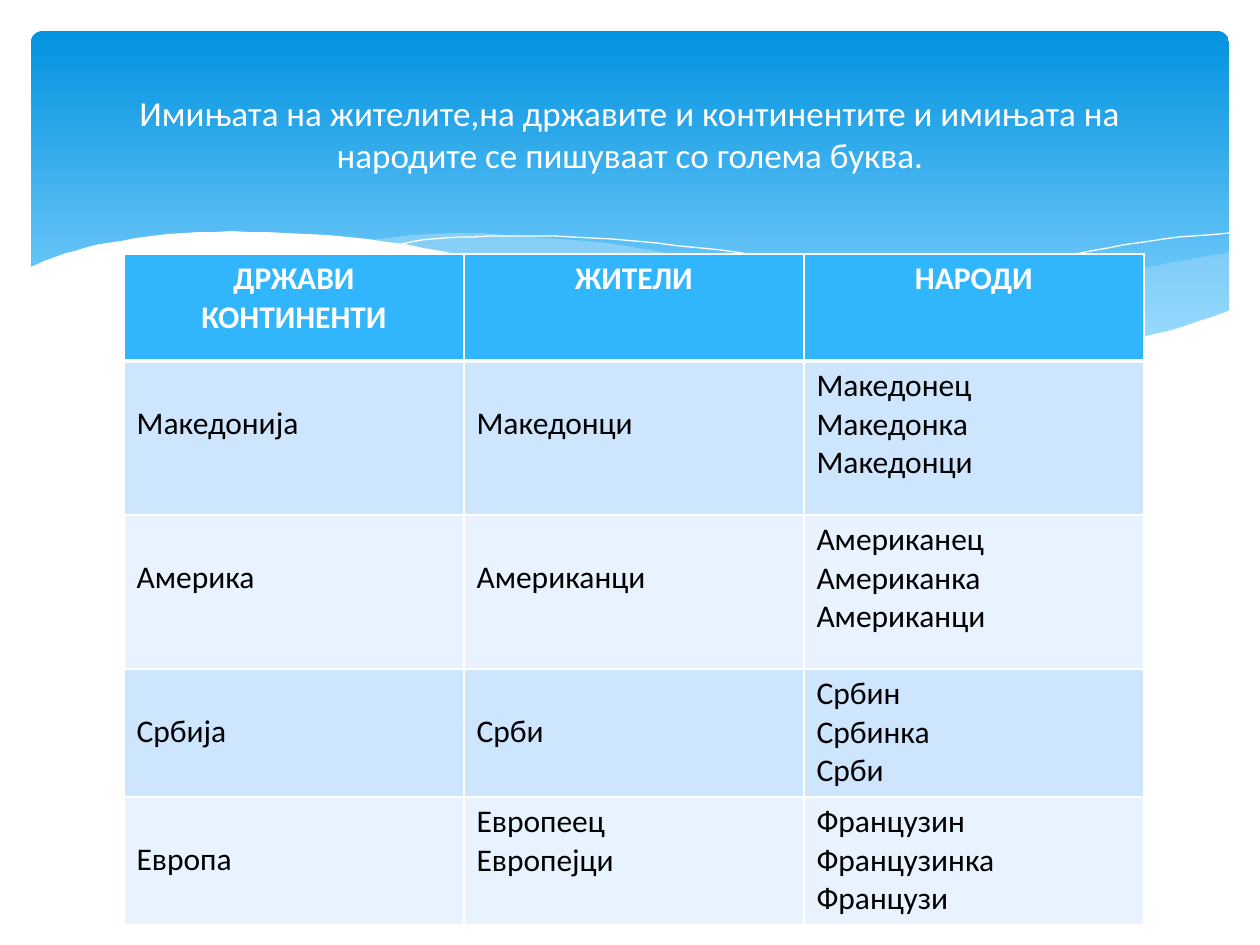
import pptx
import pptx.util
import pptx.dml.color
import pptx.enum.shapes
import pptx.enum.text
import pptx.oxml
import pptx.oxml.ns
from dataclasses import dataclass


@dataclass(frozen=True)
class Theme:
    font: str = "Calibri"
    title_pt: int = 20
    cell_pt: int = 18
    white: str = "FFFFFF"
    black: str = "000000"
    sky_top: str = "0293E0"
    sky_bottom: str = "83D3FE"
    wave: str = "C6E7FC"
    header: str = "31B6FD"
    bands: tuple = ("CEE5FE", "E8F3FF")


T = Theme()
PX = 914400 / 126
WIDTH, HEIGHT = 1260, 945

TITLE = ("Имињата на жителите,на државите и континентите и имињата на "
         "народите се пишуваат со голема буква.")
TITLE_BOX = (63, 47, 1134, 173)
SKY_BOX = (31, 31, 1198, 340)

TABLE = [
    [["ДРЖАВИ", "КОНТИНЕНТИ"], ["ЖИТЕЛИ"], ["НАРОДИ"]],
    [["Македонија"], ["Македонци"], ["Македонец", "Македонка", "Македонци"]],
    [["Америка"], ["Американци"], ["Американец", "Американка", "Американци"]],
    [["Србија"], ["Срби"], ["Србин", "Србинка", "Срби"]],
    [["Европа"], ["Европеец", "Европејци"],
     ["Французин", "Французинка", "Французи"]],
]
TABLE_LEFT, TABLE_TOP, COL_W = 124, 254, 340
ROW_H = [107, 154, 154, 128, 128]
CELL_PAD, LINE_H = 6, 38

WAVES = [
    dict(fill=T.wave, alpha=29, curves=[
        [(1230, 252), (1160, 265), (1085, 281), (949, 312), (833, 334)],
        [(833, 334), (906, 343), (1012, 350), (1110, 344), (1178, 330),
         (1230, 311)]]),
    dict(fill=T.wave, alpha=40, curves=[
        [(1125, 344), (1017, 328), (890, 302), (793, 280), (682, 256),
         (586, 241), (455, 233), (360, 241)],
        [(360, 241), (456, 256), (566, 280), (713, 312), (838, 335),
         (942, 348), (1031, 350), (1125, 344)]]),
    dict(line=T.white, curves=[
        [(389, 246), (433, 239), (505, 236), (591, 238), (701, 248),
         (801, 262), (916, 285), (1047, 316), (1143, 343)]]),
    dict(line=T.white, curves=[
        [(772, 324), (876, 296), (978, 272), (1091, 251), (1164, 239),
         (1229, 233)]]),
    dict(fill=T.white, alpha=100, curves=[
        [(1231, 310), (1172, 330), (1103, 344), (1019, 349), (915, 343),
         (789, 325), (667, 301), (563, 277), (460, 255), (368, 239),
         (266, 232), (184, 233), (107, 243), (58, 256), (29, 268)],
        [(29, 415), (1231, 415)]]),
]


def emu(px):
    return pptx.util.Emu(round(px * PX))


def rgb(value):
    return pptx.dml.color.RGBColor.from_string(value)


def smooth_curve(knots, steps=5):
    padded = [knots[0], *knots, knots[-1]]
    points = [knots[0]]
    for a, b, c, d in zip(padded, padded[1:], padded[2:], padded[3:]):
        for i in range(1, steps + 1):
            t = i / steps
            points.append(tuple(
                (2 * q + (r - p) * t + (2 * p - 5 * q + 4 * r - u) * t ** 2
                 + (3 * q - p - 3 * r + u) * t ** 3) / 2
                for p, q, r, u in zip(a, b, c, d)))
    return points


def add_run(p, text, size, color, bold=False):
    r = p.add_run()
    r.text = text
    r.font.name = T.font
    r.font.size = pptx.util.Pt(size)
    r.font.bold = bold
    r.font.color.rgb = rgb(color)


def add_sky(s):
    sp = s.shapes.add_shape(pptx.enum.shapes.MSO_SHAPE.ROUNDED_RECTANGLE,
                            *map(emu, SKY_BOX))
    sp.adjustments[0] = 0.034
    sp.shadow.inherit = False
    sp.line.fill.background()
    sp.fill.gradient()
    sp.fill.gradient_angle = 270
    for stop, color, position in zip(sp.fill.gradient_stops,
                                     (T.sky_top, T.sky_bottom), (0, 0.9)):
        stop.color.rgb = rgb(color)
        stop.position = position


def add_wave(s, curves, fill=None, alpha=100, line=None):
    points = [pt for knots in curves for pt in smooth_curve(knots)]
    builder = s.shapes.build_freeform(*points[0], scale=PX)
    builder.add_line_segments(points[1:], close=fill is not None)
    sp = builder.convert_to_shape()
    sp.shadow.inherit = False
    if fill:
        sp.fill.solid()
        sp.fill.fore_color.rgb = rgb(fill)
        sp.line.fill.background()
        if alpha < 100:
            color = sp.element.spPr.find(".//" + pptx.oxml.ns.qn("a:srgbClr"))
            color.append(pptx.oxml.parse_xml(
                f'<a:alpha {pptx.oxml.ns.nsdecls("a")} val="{alpha * 1000}"/>'))
    else:
        sp.fill.background()
        sp.line.color.rgb = rgb(line)
        sp.line.width = pptx.util.Pt(0)


def add_borders(cell, top, bottom):
    tcPr = cell._tc.get_or_add_tcPr()
    for i, (side, width) in enumerate(
            [("L", 1), ("R", 1), ("T", top), ("B", bottom)]):
        tcPr.insert(i, pptx.oxml.parse_xml(
            f'<a:ln{side} {pptx.oxml.ns.nsdecls("a")} w="{width * 12700}">'
            f'<a:solidFill><a:srgbClr val="{T.white}"/></a:solidFill>'
            f'</a:ln{side}>'))


def add_names_table(s):
    cols = len(TABLE[0])
    table = s.shapes.add_table(
        len(TABLE), cols, emu(TABLE_LEFT), emu(TABLE_TOP),
        emu(COL_W * cols), emu(sum(ROW_H))).table
    table.horz_banding = False
    for col in table.columns:
        col.width = emu(COL_W)
    for y, row in enumerate(TABLE):
        header = y == 0
        table.rows[y].height = emu(ROW_H[y])
        for x, lines in enumerate(row):
            cell = table.cell(y, x)
            lowered = not header and len(lines) == 1
            cell.margin_top = emu(CELL_PAD + LINE_H * lowered)
            cell.fill.solid()
            cell.fill.fore_color.rgb = rgb(
                T.header if header else T.bands[(y - 1) % 2])
            add_borders(cell, 3 if y == 1 else 1, 3 if header else 1)
            tf = cell.text_frame
            for i, text in enumerate(lines):
                p = tf.add_paragraph() if i else tf.paragraphs[0]
                if header:
                    p.alignment = pptx.enum.text.PP_ALIGN.CENTER
                add_run(p, text, T.cell_pt, T.white if header else T.black,
                        header)


def add_title(s):
    title = s.shapes.title
    title.left, title.top, title.width, title.height = map(emu, TITLE_BOX)
    title.element.getparent().append(title.element)
    tf = title.text_frame
    tf.word_wrap = True
    tf.vertical_anchor = pptx.enum.text.MSO_ANCHOR.MIDDLE
    p = tf.paragraphs[0]
    p.alignment = pptx.enum.text.PP_ALIGN.CENTER
    add_run(p, TITLE, T.title_pt, T.white)


def main():
    prs = pptx.Presentation()
    prs.slide_width, prs.slide_height = emu(WIDTH), emu(HEIGHT)
    s = prs.slides.add_slide(prs.slide_layouts[5])
    add_sky(s)
    for wave in WAVES:
        add_wave(s, **wave)
    add_title(s)
    add_names_table(s)
    prs.save("out.pptx")


if __name__ == "__main__":
    main()
